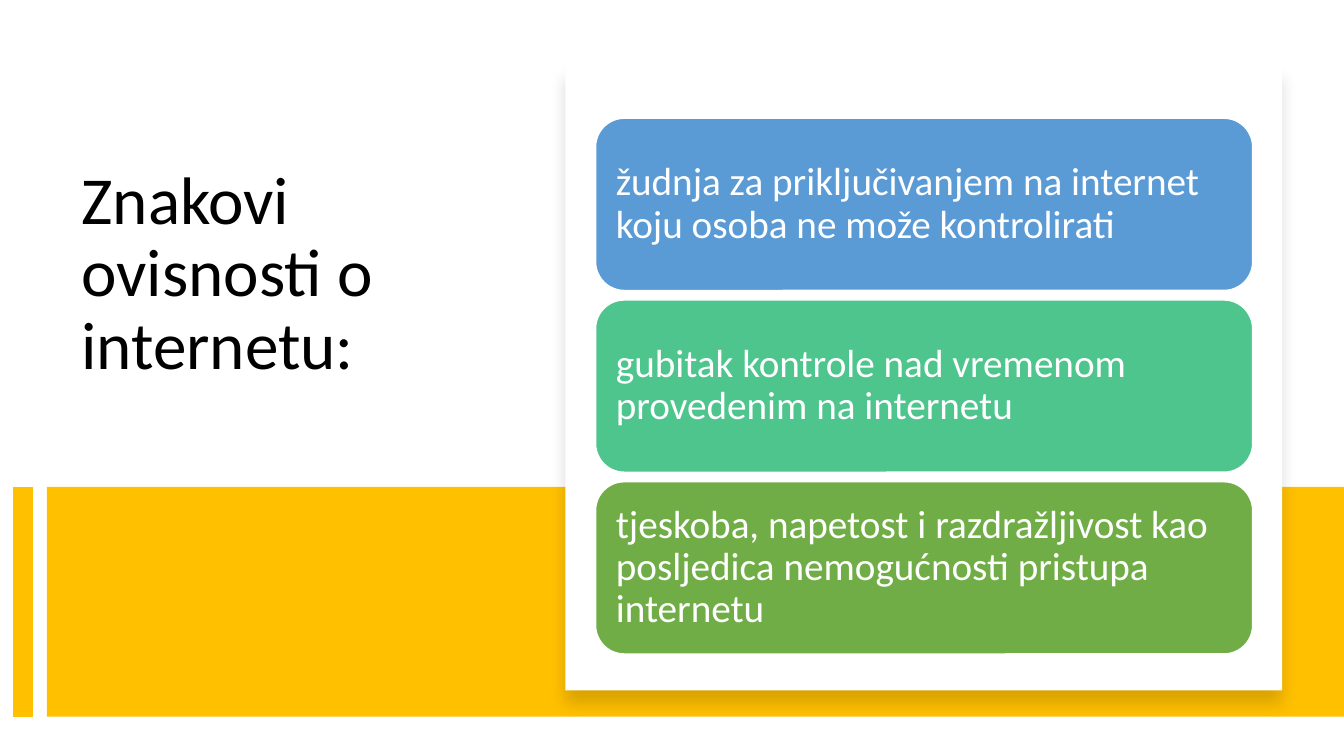
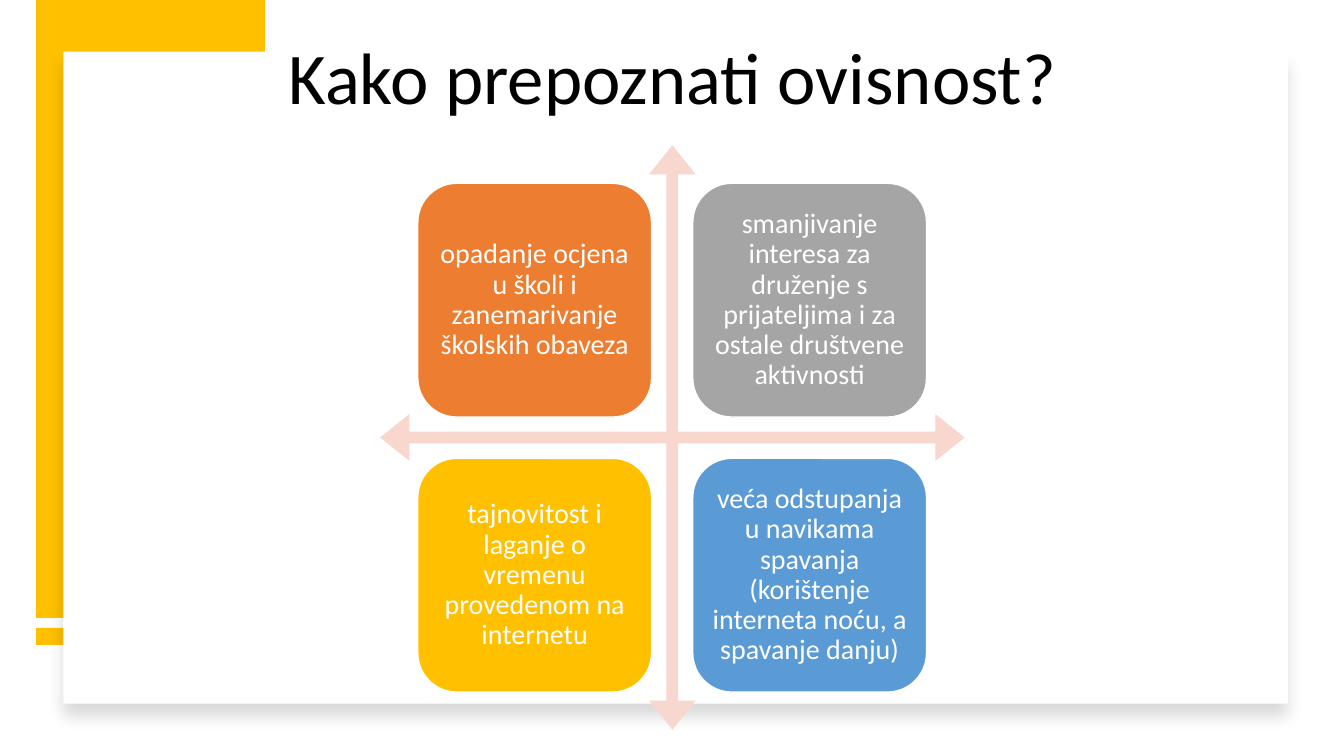
from lxml.etree import SubElement
from pptx import Presentation
from pptx.dml.color import RGBColor
from pptx.enum.shapes import MSO_CONNECTOR, MSO_SHAPE
from pptx.enum.text import MSO_ANCHOR, PP_ALIGN
from pptx.oxml.ns import qn
from pptx.util import Cm, Pt

YELLOW, WHITE, BLACK = "FFC000", "FFFFFF", "000000"
BLUE, TEAL, GREEN = "5B9BD5", "4DC58D", "70AD47"
ORANGE, GREY, PINK = "ED7D31", "A5A5A5", "F8D7CE"


def add_block(page, kind, bounds, fill, shadow=False):
    box = page.shapes.add_shape(kind, *[Cm(length) for length in bounds])
    box.shadow.inherit = False
    box.fill.solid()
    box.fill.fore_color.rgb = RGBColor.from_string(fill)
    if kind == MSO_SHAPE.ROUNDED_RECTANGLE:
        box.line.color.rgb = RGBColor.from_string(WHITE)
        box.line.width = Pt(1)
    else:
        box.line.fill.background()
    if shadow:
        effects = box._element.spPr.find(qn("a:effectLst"))
        outer = SubElement(effects, qn("a:outerShdw"), blurRad=str(Pt(11)),
                           dist=str(Pt(10)), dir="5400000", rotWithShape="0")
        color = SubElement(outer, qn("a:srgbClr"), val=BLACK)
        SubElement(color, qn("a:alpha"), val="15000")
    return box


def write_text(box, text, size, color, align, anchor, inset_x, inset_y):
    frame = box.text_frame
    frame.word_wrap = True
    frame.vertical_anchor = anchor
    frame.margin_left = frame.margin_right = Cm(inset_x)
    frame.margin_top = frame.margin_bottom = Cm(inset_y)
    para = frame.paragraphs[0]
    para.text = text
    para.alignment = align
    para.line_spacing = 0.9
    para.font.name = "Calibri"
    para.font.size = Pt(size)
    para.font.color.rgb = RGBColor.from_string(color)


deck = Presentation()
deck.slide_width, deck.slide_height = Cm(33.87), Cm(19.05)
blank = deck.slide_layouts[6]

page = deck.slides.add_slide(blank)
title = page.shapes.add_textbox(Cm(1.8), Cm(4.06), Cm(10.54), Cm(7.47))
write_text(title, "Znakovi ovisnosti o internetu:", 48, BLACK,
           PP_ALIGN.LEFT, MSO_ANCHOR.TOP, 0.25, 0.13)
add_block(page, MSO_SHAPE.RECTANGLE, (1.18, 12.27, 32.69, 5.79), YELLOW)
stripe = page.shapes.add_connector(MSO_CONNECTOR.STRAIGHT, Cm(0.58), Cm(12.27), Cm(0.58), Cm(18.06))
stripe.line.color.rgb = RGBColor.from_string(YELLOW)
stripe.line.width = Pt(14)
SubElement(stripe._element.spPr, qn("a:effectLst"))
add_block(page, MSO_SHAPE.RECTANGLE, (14.25, 1.63, 18.06, 15.77), WHITE, shadow=True)

signs = [
    (BLUE, "žudnja za priključivanjem na internet koju osoba ne može kontrolirati"),
    (TEAL, "gubitak kontrole nad vremenom provedenim na internetu"),
    (GREEN, "tjeskoba, napetost i razdražljivost kao posljedica nemogućnosti pristupa internetu"),
]
for row, (fill, text) in enumerate(signs):
    card = add_block(page, MSO_SHAPE.ROUNDED_RECTANGLE, (15.01, 2.98 + row * 4.58, 16.56, 4.34), fill)
    write_text(card, text, 28, WHITE, PP_ALIGN.LEFT, MSO_ANCHOR.MIDDLE, 0.3, 0.3)

page = deck.slides.add_slide(blank)
add_block(page, MSO_SHAPE.RECTANGLE, (0.91, 15.82, 5.77, 0.43), YELLOW)
add_block(page, MSO_SHAPE.RECTANGLE, (0.91, 0, 5.77, 15.57), YELLOW)
add_block(page, MSO_SHAPE.RECTANGLE, (1.6, 1.3, 30.86, 16.43), WHITE, shadow=True)
title = page.shapes.add_textbox(Cm(2.34), Cm(0.46), Cm(29.21), Cm(3.15))
write_text(title, "Kako prepoznati ovisnost?", 52, BLACK,
           PP_ALIGN.CENTER, MSO_ANCHOR.MIDDLE, 0.25, 0.13)
cross = add_block(page, MSO_SHAPE.QUAD_ARROW, (9.58, 3.66, 14.73, 14.73), PINK)
for index, value in enumerate((0.02, 0.04, 0.05)):
    cross.adjustments[index] = value

symptoms = [
    (ORANGE, "opadanje ocjena u školi i zanemarivanje školskih obaveza"),
    (GREY, "smanjivanje interesa za druženje s prijateljima i za ostale društvene aktivnosti"),
    (YELLOW, "tajnovitost i laganje o vremenu provedenom na internetu"),
    (BLUE, "veća odstupanja u navikama spavanja (korištenje interneta noću, a spavanje danju)"),
]
for index, (fill, text) in enumerate(symptoms):
    row, column = divmod(index, 2)
    bounds = (10.53 + column * 6.93, 4.62 + row * 6.93, 5.89, 5.89)
    card = add_block(page, MSO_SHAPE.ROUNDED_RECTANGLE, bounds, fill)
    write_text(card, text, 20, WHITE, PP_ALIGN.CENTER, MSO_ANCHOR.MIDDLE, 0.2, 0.2)

deck.save("out.pptx")
